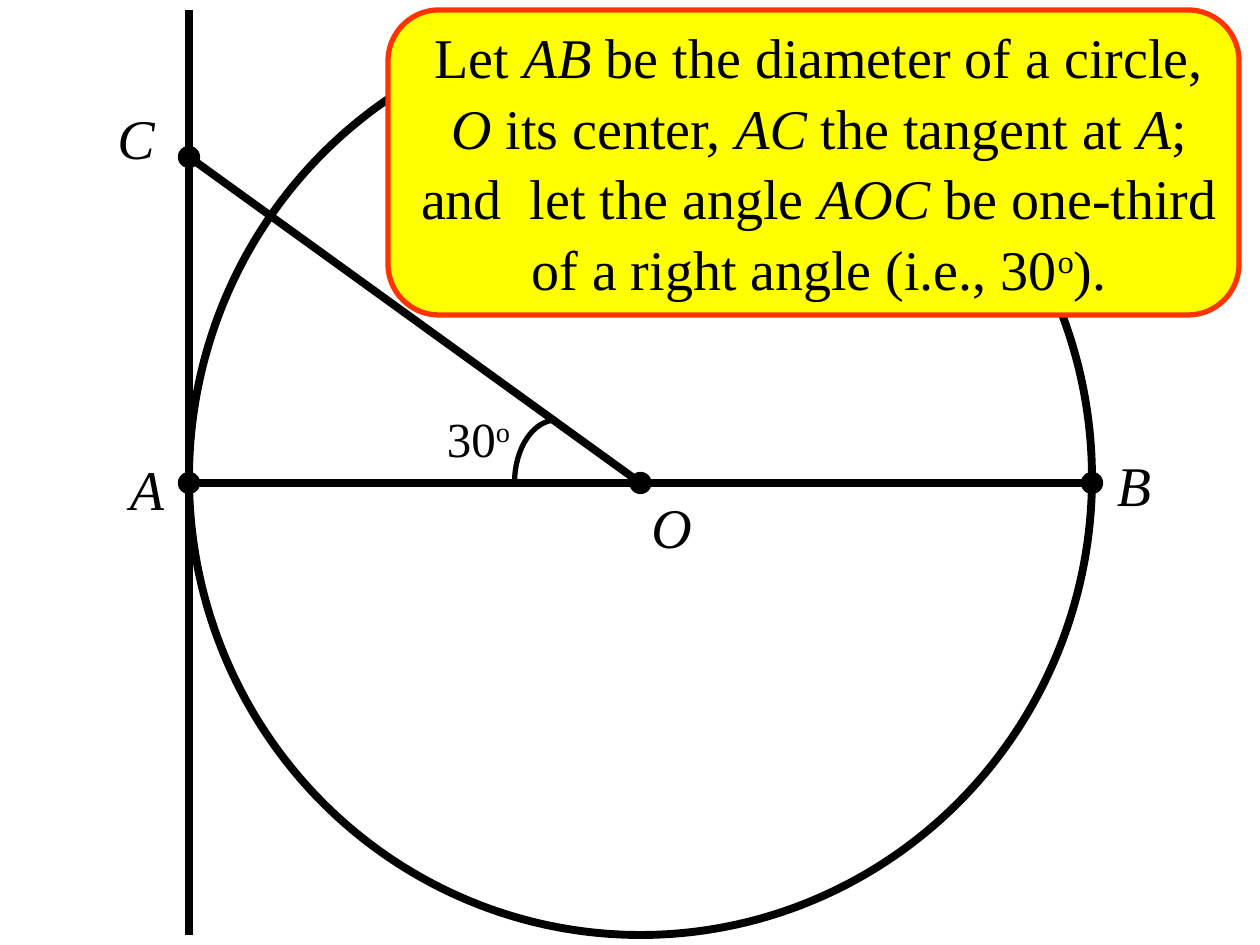
import math

from lxml import etree
from pptx import Presentation
from pptx.dml.color import RGBColor
from pptx.enum.shapes import MSO_CONNECTOR, MSO_SHAPE
from pptx.enum.text import MSO_AUTO_SIZE, PP_ALIGN
from pptx.oxml.ns import qn
from pptx.util import Emu, Pt

OVAL = MSO_SHAPE.OVAL
ROUNDED = MSO_SHAPE.ROUNDED_RECTANGLE
STRAIGHT = MSO_CONNECTOR.STRAIGHT
CENTER = PP_ALIGN.CENTER
GROW = MSO_AUTO_SIZE.SHAPE_TO_FIT_TEXT

PX = 914400 / 126
THEME = {
    "font": "Times New Roman",
    "ink": RGBColor(0x00, 0x00, 0x00),
    "panel": RGBColor(0xFF, 0xFF, 0x00),
    "border": RGBColor(0xFF, 0x33, 0x00),
    "body": Pt(32),
    "angle": Pt(28),
    "heavy": Pt(4.5),
    "medium": Pt(3),
    "thin": Pt(0.75),
    "spacing": 1.05,
}
DOT = 21
LABEL_SIZE = (84, 79)

STATEMENT = [
    ("Let ", ""), ("AB", "italic"), (" be the diameter of a circle, ", ""),
    ("O", "italic"), (" its center, ", ""), ("AC", "italic"),
    (" the tangent at ", ""), ("A", "italic"), ("; and  let the angle ", ""),
    ("AOC", "italic"), (" be one-third of a right angle (i.e., 30", ""),
    ("o", "super"), (").", ""),
]


def px(*values):
    return [Emu(round(v * PX)) for v in values]


def style(sp, line, width, fill=None):
    sp.shadow.inherit = False
    if fill is None:
        sp.fill.background()
    else:
        sp.fill.solid()
        sp.fill.fore_color.rgb = fill
    sp.line.color.rgb = line
    sp.line.width = width


def add_line(s, start, end):
    cn = s.shapes.add_connector(STRAIGHT, *px(*start, *end))
    cn.line.color.rgb = THEME["ink"]
    cn.line.width = THEME["heavy"]
    etree.SubElement(cn._element.spPr, qn("a:effectLst"))


def add_dot(s, x, y):
    sp = s.shapes.add_shape(OVAL, *px(x - DOT / 2, y - DOT / 2, DOT, DOT))
    style(sp, THEME["ink"], THEME["thin"], THEME["ink"])


def add_text(s, box, runs, size):
    """Add one centred paragraph of (text, "" | "italic" | "super") runs."""
    tf = s.shapes.add_textbox(*px(*box)).text_frame
    tf.word_wrap = True
    tf.auto_size = GROW
    p = tf.paragraphs[0]
    for name, value in {"alignment": CENTER, "line_spacing": THEME["spacing"]}.items():
        setattr(p, name, value)
    for text, kind in runs:
        r = p.add_run()
        r.text = text
        font = {"name": THEME["font"], "size": size, "italic": kind == "italic"}
        for name, value in font.items():
            setattr(r.font, name, value)
        r.font.color.rgb = THEME["ink"]
        if kind == "super":
            r.font._element.set("baseline", "30000")


def add_circle(s, box):
    style(s.shapes.add_shape(OVAL, *px(*box)), THEME["ink"], THEME["heavy"])


def add_callout(s, box):
    x, y, w, h = box
    sp = s.shapes.add_shape(ROUNDED, *px(*box))
    sp.adjustments[0] = 0.167
    style(sp, THEME["border"], THEME["medium"], THEME["panel"])
    add_text(s, (x + 11, y + 3, w - 11, h - 24), STATEMENT, THEME["body"])


def add_angle_mark(s, box, steps=16):
    """Draw the upper left quarter of an ellipse that fills the box."""
    x, y, w, h = box
    turns = [math.pi / 2 * i / steps for i in range(steps + 1)]
    points = [px(x + w - w * math.sin(t), y + h - h * math.cos(t)) for t in turns]
    fb = s.shapes.build_freeform(*points[0])
    fb.add_line_segments(points[1:], close=False)
    style(fb.convert_to_shape(), THEME["ink"], THEME["medium"])


def add_construction(s, box):
    """Draw tangent, diameter, slanted line AC-O and the named points."""
    x, y, w, h = box
    mid = y + 473
    a, b, c, o = (x, mid), (x + w, mid), (x, y + 147), (x + w / 2, mid)
    for start, end in ((a, b), (a[:1] + (y,), (x, y + h)), (o, c)):
        add_line(s, start, end)
    label_offsets = {
        "O": (o, -11, 0), "C": (c, -95, -63), "A": (a, -84, -38), "B": (b, 0, -42),
    }
    for name, (point, dx, dy) in label_offsets.items():
        add_dot(s, *point)
        corner = (point[0] + dx, point[1] + dy)
        add_text(s, corner + LABEL_SIZE, [(name, "italic")], THEME["body"])
    add_angle_mark(s, (o[0] - 126, mid - 63, 42, 63))
    add_text(s, (o[0] - 220, mid - 84, 116, 72),
             [("30", ""), ("o", "super")], THEME["angle"])


def main():
    prs = Presentation()
    prs.slide_width, prs.slide_height = px(1260, 945)
    s = prs.slides.add_slide(prs.slide_layouts[6])
    add_circle(s, (189, 21, 903, 914))
    add_callout(s, (388, 10, 851, 305))
    add_construction(s, (189, 10, 903, 925))
    prs.save("out.pptx")


if __name__ == "__main__":
    main()
